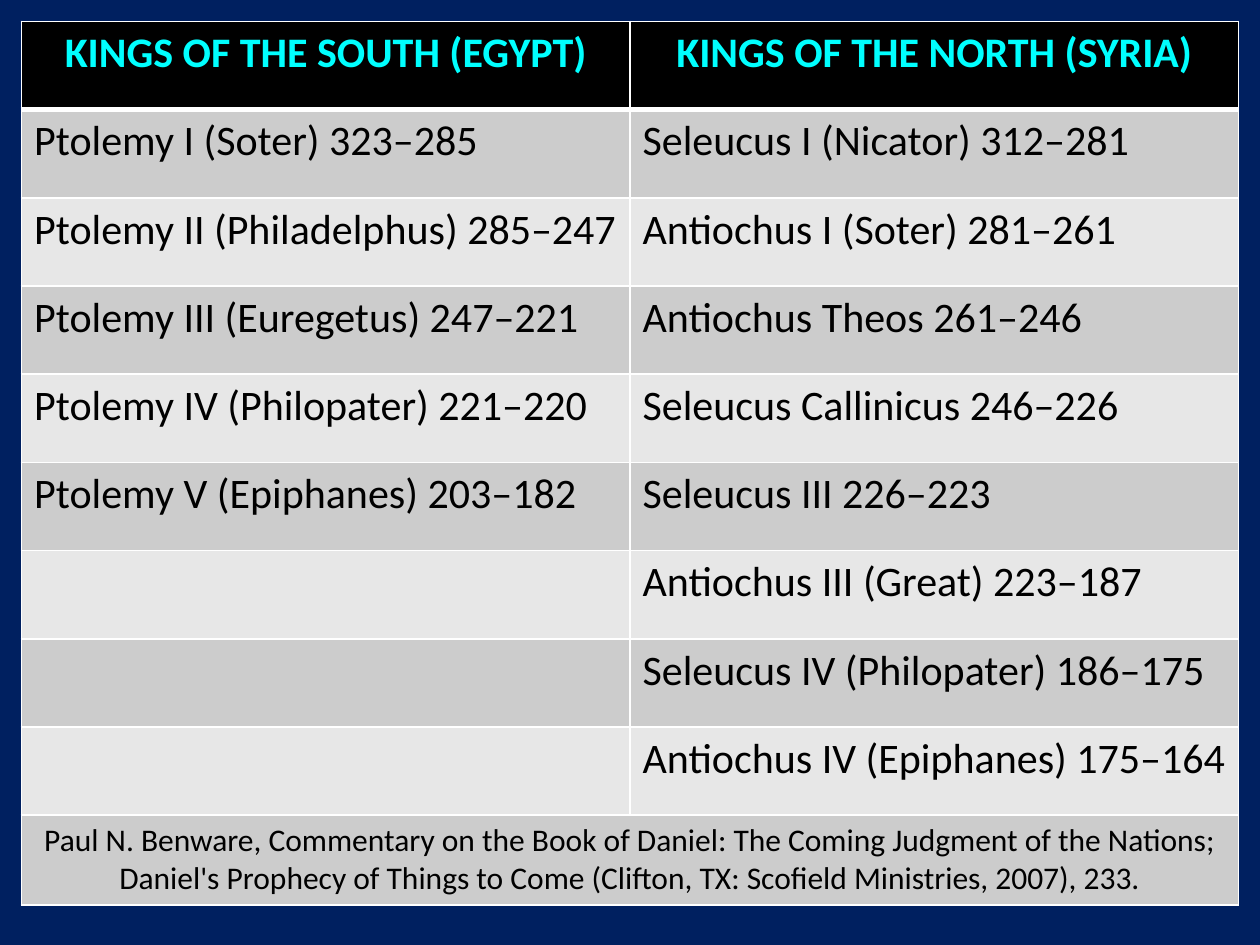
from itertools import zip_longest

from lxml import etree
from pptx import Presentation
from pptx.dml.color import RGBColor
from pptx.enum.text import PP_ALIGN
from pptx.oxml.ns import qn
from pptx.util import Inches, Pt

CENTER, LEFT = PP_ALIGN.CENTER, PP_ALIGN.LEFT
BLANK_LAYOUT = 6

HEADINGS = ("KINGS OF THE SOUTH (EGYPT)", "KINGS OF THE NORTH (SYRIA)")
SOUTH_KINGS = [
    "Ptolemy I (Soter) 323–285",
    "Ptolemy II (Philadelphus) 285–247",
    "Ptolemy III (Euregetus) 247–221",
    "Ptolemy IV (Philopater) 221–220",
    "Ptolemy V (Epiphanes) 203–182",
]
NORTH_KINGS = [
    "Seleucus I (Nicator) 312–281",
    "Antiochus I (Soter) 281–261",
    "Antiochus Theos 261–246",
    "Seleucus Callinicus 246–226",
    "Seleucus III 226–223",
    "Antiochus III (Great) 223–187",
    "Seleucus IV (Philopater) 186–175",
    "Antiochus IV (Epiphanes) 175–164",
]
CITATION = (
    "Paul N. Benware, Commentary on the Book of Daniel: The Coming Judgment of the Nations; "
    "Daniel's Prophecy of Things to Come (Clifton, TX: Scofield Ministries, 2007), 233."
)

THEME = {
    "font": "Calibri",
    "background": "002060",
    "border": "FFFFFF",
    "header_fill": "000000",
    "bands": ("CCCCCC", "E7E7E7"),
    "header": {"size": 24, "bold": True, "color": "00FFFF", "align": CENTER},
    "king": {"size": 24, "bold": False, "color": "000000", "align": LEFT},
    "citation": {"size": 18, "bold": False, "color": "000000", "align": CENTER},
}
THIN, THICK = 1, 3
MARGIN, ROW_HEIGHT, COLUMN_WIDTH = 0.17, 0.7, 4.83


def set_borders(cell, widths):
    """Add cell borders; call before the fill, which must follow them in the XML."""
    properties = cell._tc.get_or_add_tcPr()
    for side, width in widths.items():
        line = etree.SubElement(properties, qn(f"a:ln{side}"), w=str(Pt(width)))
        fill = etree.SubElement(line, qn("a:solidFill"))
        etree.SubElement(fill, qn("a:srgbClr"), val=THEME["border"])


def write_cell(cell, text, style):
    paragraph = cell.text_frame.paragraphs[0]
    paragraph.alignment = style["align"]
    font_values = {"name": THEME["font"], "size": Pt(style["size"]), "bold": style["bold"]}
    fonts = [paragraph.font]
    if text:
        run = paragraph.add_run()
        run.text = text
        fonts = [run.font]
    for font in fonts:
        for attribute, value in font_values.items():
            setattr(font, attribute, value)
        font.color.rgb = RGBColor.from_string(style["color"])


def main():
    presentation = Presentation()
    presentation.slide_width, presentation.slide_height = Inches(10), Inches(7.5)
    slide = presentation.slides.add_slide(presentation.slide_layouts[BLANK_LAYOUT])
    background = slide.background.fill
    background.solid()
    background.fore_color.rgb = RGBColor.from_string(THEME["background"])

    reigns = list(zip_longest(SOUTH_KINGS, NORTH_KINGS, fillvalue=""))
    rows = [("header", HEADINGS), *(("king", pair) for pair in reigns),
            ("citation", (CITATION, ""))]
    table = slide.shapes.add_table(
        len(rows), len(HEADINGS), Inches(MARGIN), Inches(MARGIN),
        Inches(COLUMN_WIDTH * len(HEADINGS)), Inches(ROW_HEIGHT * len(rows))).table
    for column in table.columns:
        column.width = Inches(COLUMN_WIDTH)

    for row_index, (role, texts) in enumerate(rows):
        table.rows[row_index].height = Inches(ROW_HEIGHT)
        fill_color = THEME["header_fill"] if role == "header" else THEME["bands"][(row_index - 1) % 2]
        widths = {"L": THIN, "R": THIN,
                  "T": THICK if row_index == 1 else THIN,
                  "B": THICK if role == "header" else THIN}
        for column_index, text in enumerate(texts):
            cell = table.cell(row_index, column_index)
            set_borders(cell, widths)
            cell.fill.solid()
            cell.fill.fore_color.rgb = RGBColor.from_string(fill_color)
            write_cell(cell, text, THEME[role])

    last_row = len(rows) - 1
    table.cell(last_row, 0).merge(table.cell(last_row, len(HEADINGS) - 1))
    presentation.save("out.pptx")


if __name__ == "__main__":
    main()
